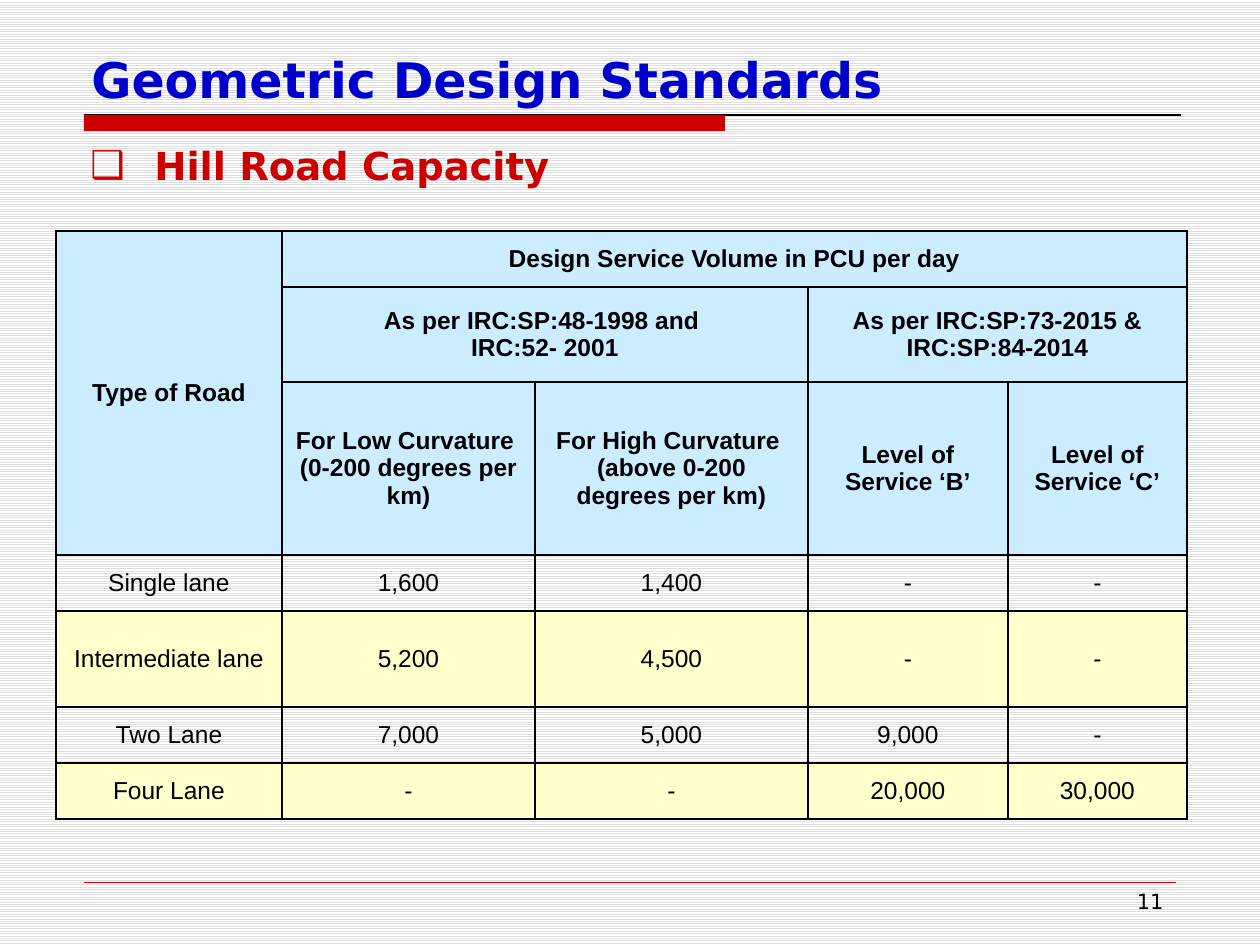
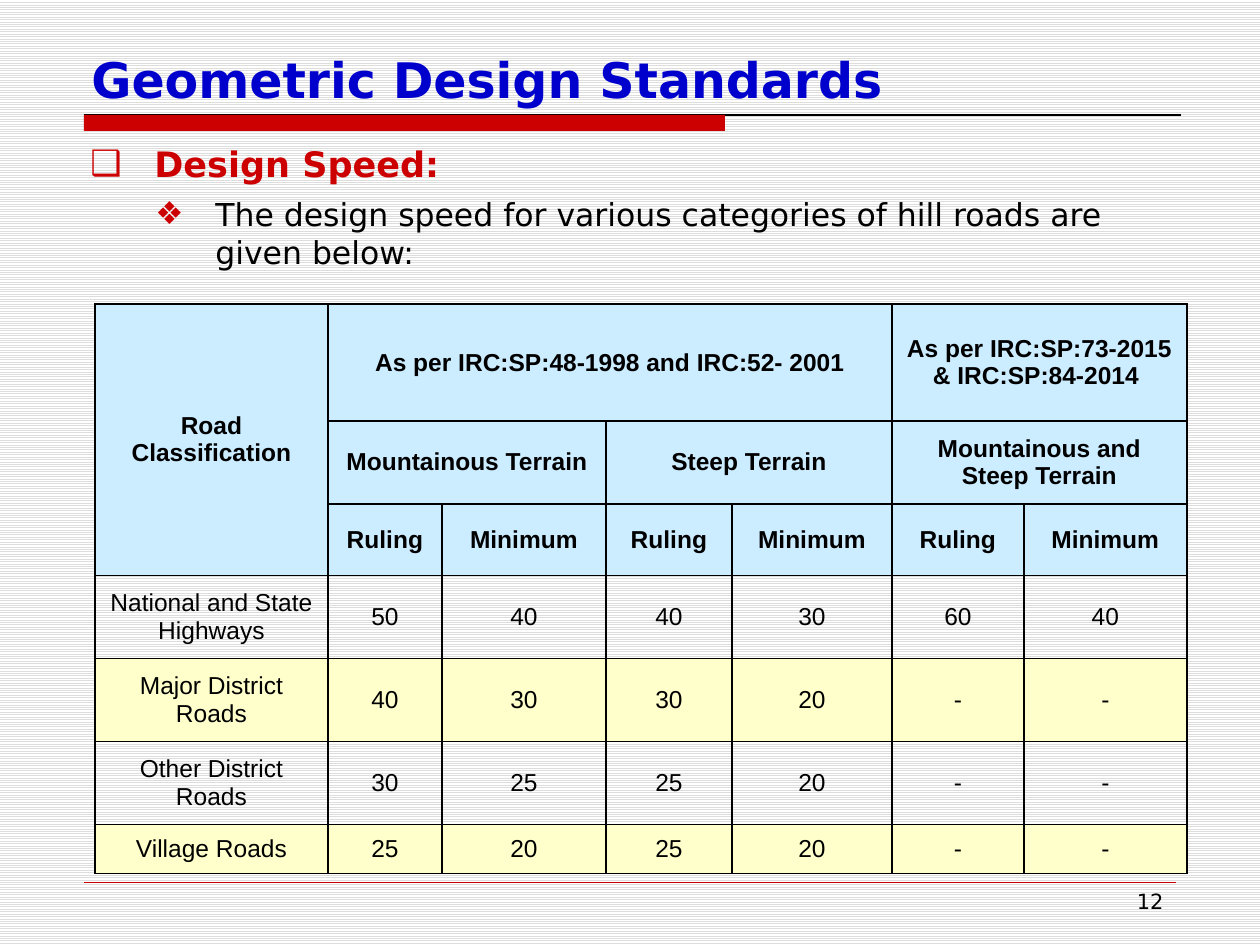
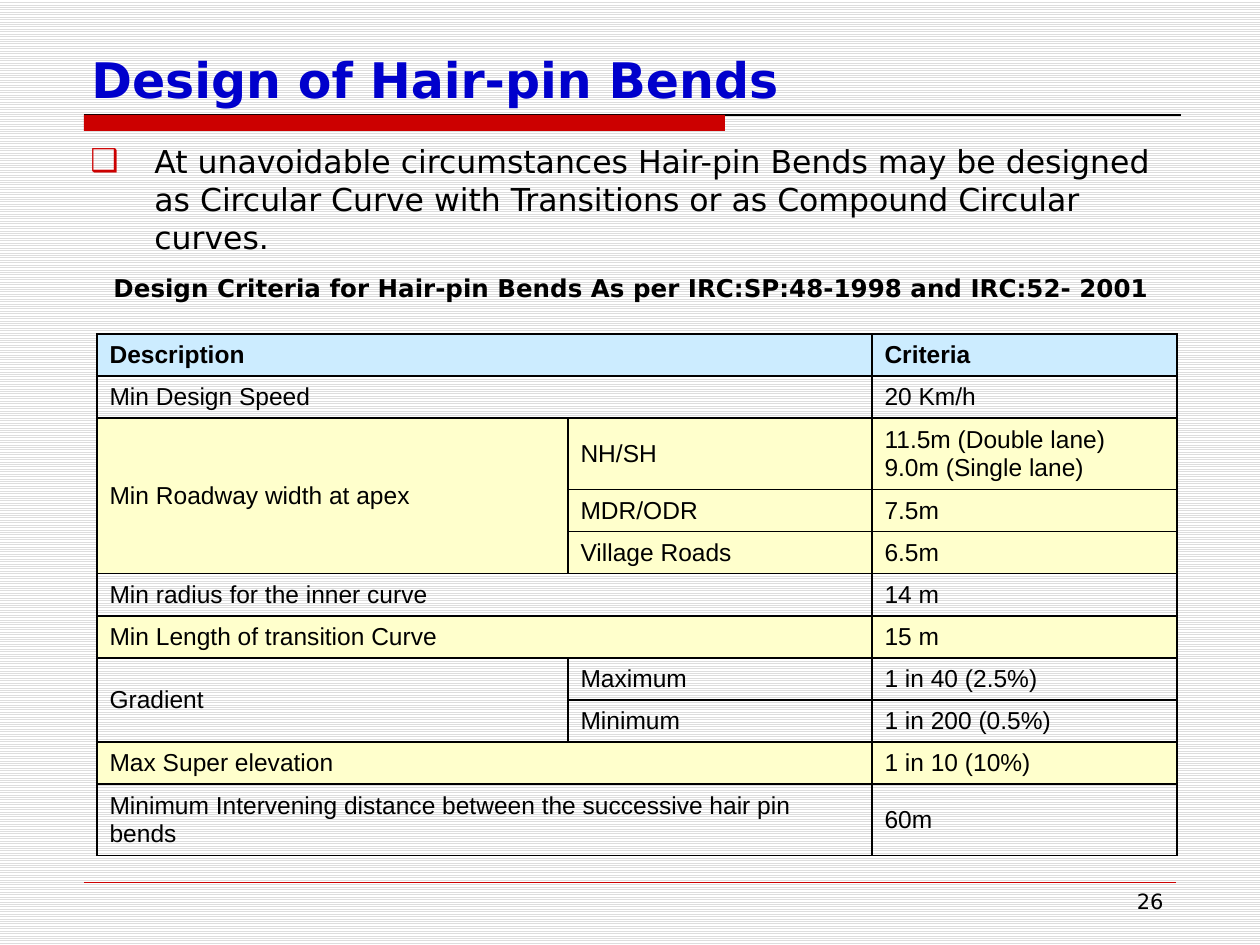
from lxml import etree
from pptx import Presentation
from pptx.dml.color import RGBColor
from pptx.enum import dml, shapes, text
from pptx.oxml.ns import qn
from pptx.util import Pt

# Shared looks
HUES = {"blue": "0000CC", "red": "CC0000", "ink": "000000", "head": "CCECFF",
        "shade": "FFFFCC", "rule": "DDDDDD", "paper": "FFFFFF"}
SANS, ARIAL = "DejaVu Sans", "Arial"
LEFT, MID, RIGHT = text.PP_ALIGN.LEFT, text.PP_ALIGN.CENTER, text.PP_ALIGN.RIGHT
BULLETS = {0: ("❑", 64, 64), 1: ("❖", 125, 60)}  # sign, indent, hang

# Content: "<" joins a cell to its left, "^" to the one above
PAGES = [
    {"title": "Geometric Design Standards", "num": "11", "high": 588,
     "body": [(0, "Hill Road Capacity", 22, "red", True, 4.4)],
     "table": {
         "at": (56, 231), "align": MID, "heads": 3, "shade": {4, 6},
         "cols": [226, 253, 273, 200, 179],
         "rows": [56, 95, 173, 56, 96, 56, 56],
         "cells": [
             ["Type of Road", "Design Service Volume in PCU per day", "<", "<", "<"],
             ["^", "As per IRC:SP:48-1998 and \vIRC:52- 2001", "<",
              "As per IRC:SP:73-2015 & IRC:SP:84-2014", "<"],
             ["^", "For Low Curvature \v(0-200 degrees per km)",
              "For High Curvature \v(above 0-200 degrees per km)",
              "Level of Service ‘B’", "Level of Service ‘C’"],
             ["Single lane", "1,600", "1,400", "-", "-"],
             ["Intermediate lane", "5,200", "4,500", "-", "-"],
             ["Two Lane", "7,000", "5,000", "9,000", "-"],
             ["Four Lane", "-", "-", "20,000", "30,000"]]}},
    {"title": "Geometric Design Standards", "num": "12", "high": 158,
     "body": [(0, "Design Speed:", 20, "red", True, 6),
              (1, "The design speed for various categories of hill roads are "
                  "given below:", 18, "ink", False, 6)],
     "table": {
         "at": (95, 304), "align": MID, "heads": 3, "shade": {4, 6},
         "cols": [233, 114, 164, 126, 160, 132, 163],
         "rows": [117, 83, 68, 83, 83, 83, 49],
         "cells": [
             ["Road Classification", "As per IRC:SP:48-1998 and IRC:52- 2001",
              "<", "<", "<", "As per IRC:SP:73-2015 & IRC:SP:84-2014 ", "<"],
             ["^", "Mountainous Terrain", "<", "Steep Terrain", "<",
              "Mountainous and Steep Terrain", "<"],
             ["^"] + ["Ruling", "Minimum"] * 3,
             ["National and State Highways", "50", "40", "40", "30", "60", "40"],
             ["Major District Roads", "40", "30", "30", "20", "-", "-"],
             ["Other District Roads", "30", "25", "25", "20", "-", "-"],
             ["Village Roads", "25", "20", "25", "20", "-", "-"]]}},
    {"title": "Design of Hair-pin Bends", "num": "26", "high": 136,
     "body": [(0, "At unavoidable circumstances Hair-pin Bends may be designed as "
                  "Circular Curve with Transitions or as Compound Circular curves.",
               18, "ink", False, 3.6)],
     "note": "Design Criteria for Hair-pin Bends As per IRC:SP:48-1998 and IRC:52- 2001 ",
     "table": {
         "at": (97, 334), "align": LEFT, "heads": 1, "shade": {2, 3, 4, 6, 9},
         "cols": [471, 304, 305],
         "rows": [42, 42, 71] + [42] * 7 + [71],
         "cells": [
             ["Description", "<", "Criteria"],
             ["Min Design Speed", "<", "20 Km/h"],
             ["Min Roadway width at apex", "NH/SH",
              "11.5m (Double lane)\n9.0m (Single lane)"],
             ["^", "MDR/ODR", "7.5m"],
             ["^", "Village Roads", "6.5m"],
             ["Min radius for the inner curve", "<", "14 m"],
             ["Min Length of transition Curve", "<", "15 m"],
             ["Gradient", "Maximum", "1 in 40 (2.5%)"],
             ["^", "Minimum", "1 in 200 (0.5%)"],
             ["Max Super elevation", "<", "1 in 10 (10%)"],
             ["Minimum Intervening distance between the successive hair pin bends",
              "<", "60m"]]}},
]


def px(n):
    return round(n * 914400 / 126)


def hue(name):
    return RGBColor.from_string(HUES[name])


def style(para, size, color, bold=False, face=SANS, align=LEFT):
    para.alignment = align
    para.font.color.rgb = hue(color)
    for key, val in {"size": Pt(size), "bold": bold, "name": face}.items():
        setattr(para.font, key, val)


def box(slide, at, anchor=text.MSO_ANCHOR.TOP):
    frame = slide.shapes.add_textbox(*map(px, at)).text_frame
    frame.word_wrap = True
    frame.vertical_anchor = anchor
    return frame


def label(slide, at, words, *look, anchor=text.MSO_ANCHOR.TOP, **more):
    para = box(slide, at, anchor).paragraphs[0]
    para.text = words
    style(para, *look, **more)


def line(slide, ends, color, width):
    rule = slide.shapes.add_connector(shapes.MSO_CONNECTOR.STRAIGHT, *map(px, ends))
    rule.line.color.rgb = hue(color)
    rule.line.width = Pt(width)
    etree.SubElement(rule._element.spPr, qn("a:effectLst"))


def frame_page(slide, page):
    # Title, band, foot rule and number
    line(slide, (84, 115, 1181, 115), "ink", 0.75)
    band = slide.shapes.add_shape(shapes.MSO_SHAPE.RECTANGLE,
                                  *map(px, (84, 115, 641, 16)))
    band.shadow.inherit = False
    band.fill.solid()
    band.fill.fore_color.rgb = hue("red")
    band.line.fill.background()
    line(slide, (84, 882, 1176, 882), "red", 0.25)
    label(slide, (79, 42, 1103, 73), page["title"], 28, "blue", True,
          anchor=text.MSO_ANCHOR.BOTTOM)
    label(slide, (903, 882, 273, 44), page["num"], 12, "ink", align=RIGHT)


def add_body(slide, page):
    frame = box(slide, (78, 136, 1103, page["high"]))
    for i, (level, words, size, color, bold, gap) in enumerate(page["body"]):
        para = frame.add_paragraph() if i else frame.paragraphs[0]
        para.text = words
        para.level = level
        para.space_before = Pt(gap)
        style(para, size, color, bold)
        sign, indent, hang = BULLETS[level]
        props = para._p.get_or_add_pPr()
        props.set("marL", str(px(indent)))
        props.set("indent", str(-px(hang)))
        tint = etree.SubElement(props, qn("a:buClr"))
        etree.SubElement(tint, qn("a:srgbClr"), val=HUES["red"])
        etree.SubElement(props, qn("a:buFont"), typeface=SANS)
        etree.SubElement(props, qn("a:buChar"), char=sign)
        # Default run look comes last in the paragraph properties
        props.append(props.find(qn("a:defRPr")))


def edge(cell):
    props = cell._tc.get_or_add_tcPr()
    for side in ("lnL", "lnR", "lnT", "lnB"):
        rim = etree.SubElement(props, qn("a:" + side), w=str(Pt(1)))
        fill = etree.SubElement(rim, qn("a:solidFill"))
        etree.SubElement(fill, qn("a:srgbClr"), val=HUES["ink"])


def reach(run, mark):
    # Count the marks that follow the first item
    count = 0
    for item in run[1:]:
        if item != mark:
            break
        count += 1
    return count


def add_grid(slide, data):
    rows, cols, cells = data["rows"], data["cols"], data["cells"]
    size = (sum(cols), sum(rows))
    grid = slide.shapes.add_table(len(rows), len(cols),
                                  *map(px, data["at"] + size)).table
    grid.first_row = grid.horz_banding = False
    for col, wide in zip(grid.columns, cols):
        col.width = px(wide)
    for row, high in zip(grid.rows, rows):
        row.height = px(high)
    for r, items in enumerate(cells):
        head = r < data["heads"]
        for c, words in enumerate(items):
            cell = grid.cell(r, c)
            edge(cell)
            if head or r in data["shade"]:
                cell.fill.solid()
                cell.fill.fore_color.rgb = hue("head" if head else "shade")
            else:
                cell.fill.background()
            if words in ("<", "^"):
                continue
            cell.text = words
            cell.vertical_anchor = text.MSO_ANCHOR.MIDDLE
            for para in cell.text_frame.paragraphs:
                style(para, 14, "ink", head, ARIAL, data["align"])
            down = reach([line_[c] for line_ in cells[r:]], "^")
            over = reach(items[c:], "<")
            if down or over:
                cell.merge(grid.cell(r + down, c + over))


def main():
    deck = Presentation()
    deck.slide_width, deck.slide_height = px(1260), px(945)
    fill = deck.slide_master.background.fill
    fill.patterned()
    fill.pattern = dml.MSO_PATTERN.LIGHT_HORIZONTAL
    fill.fore_color.rgb, fill.back_color.rgb = hue("rule"), hue("paper")
    for page in PAGES:
        slide = deck.slides.add_slide(deck.slide_layouts[6])
        frame_page(slide, page)
        add_body(slide, page)
        if "note" in page:
            label(slide, (79, 267, 1113, 43), page["note"], 14, "ink", True, align=MID)
        add_grid(slide, page["table"])
    deck.save("out.pptx")


if __name__ == "__main__":
    main()
